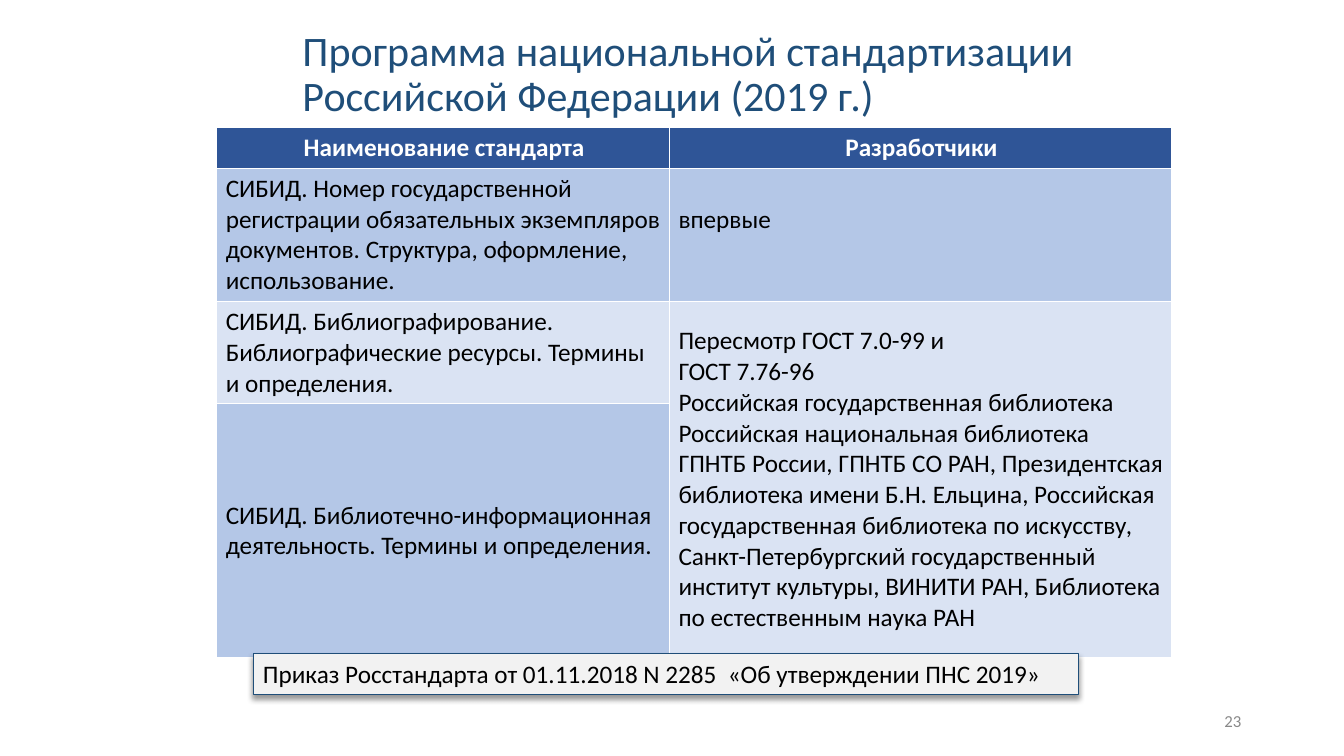
"""Builds the slide on the 2019 national standardization programme."""
from lxml.etree import SubElement
from pptx import Presentation
from pptx.dml.color import RGBColor
from pptx.enum.shapes import MSO_SHAPE
from pptx.enum.text import MSO_ANCHOR, PP_ALIGN
from pptx.oxml.ns import qn
from pptx.util import Inches, Pt

FONT = "Calibri"
NAVY, BLACK, WHITE, GRAY = "1F4E79", "000000", "FFFFFF", "898989"
HEADER, BAND, LIGHT = "2F5597", "B4C7E7", "DAE3F3"

TITLE = "Программа национальной стандартизации Российской Федерации (2019 г.)"
STANDARDS = [
    ("Наименование стандарта", "Разработчики"),
    ("СИБИД. Номер государственной регистрации обязательных экземпляров "
     "документов. Структура, оформление, использование.", "впервые"),
    ("СИБИД. Библиографирование. Библиографические ресурсы. "
     "Термины и определения.",
     "Пересмотр ГОСТ 7.0-99 и\n"
     "ГОСТ 7.76-96\n"
     "Российская государственная библиотека\n"
     "Российская национальная библиотека\n"
     "ГПНТБ России, ГПНТБ СО РАН, Президентская библиотека имени "
     "Б.Н. Ельцина, Российская государственная библиотека по искусству, "
     "Санкт-Петербургский государственный институт культуры, ВИНИТИ РАН, "
     "Библиотека по естественным наука РАН"),
    ("СИБИД. Библиотечно-информационная деятельность. "
     "Термины и определения.", ""),
]
ROW_FILLS = [HEADER, BAND, LIGHT, BAND]
COLUMNS = [4.49, 4.98]
ROWS = [0.41, 1.32, 1.01, 2.52]
ORDER = "Приказ Росстандарта от 01.11.2018 N 2285  «Об утверждении ПНС 2019»"
PAGE = "23"


def color(value):
    return RGBColor.from_string(value)


def box(left, top, width, height):
    return [Inches(length) for length in (left, top, width, height)]


def write(frame, text, size, ink, align=PP_ALIGN.LEFT, bold=False):
    frame.text = text
    frame.word_wrap = True
    for paragraph in frame.paragraphs:
        paragraph.alignment = align
        font = paragraph.font
        font.name, font.size, font.bold = FONT, Pt(size), bold
        font.color.rgb = color(ink)


def add_borders(cell):
    properties = cell._tc.get_or_add_tcPr()
    for side in ("lnL", "lnR", "lnT", "lnB"):
        border = SubElement(properties, qn(f"a:{side}"), w=str(Pt(1)))
        SubElement(SubElement(border, qn("a:solidFill")), qn("a:srgbClr"), val=WHITE)


def add_title(slide):
    title = slide.shapes.title
    title.left, title.top, title.width, title.height = box(2.9, 0.23, 7.98, 1.04)
    write(title.text_frame, TITLE, 30, NAVY)
    title.text_frame.vertical_anchor = MSO_ANCHOR.MIDDLE
    title.text_frame.paragraphs[0].line_spacing = 0.9


def add_standards(slide):
    table = slide.shapes.add_table(
        len(ROWS), len(COLUMNS), *box(2.15, 1.26, sum(COLUMNS), sum(ROWS))).table
    for column, width in zip(table.columns, COLUMNS):
        column.width = Inches(width)
    for r, (texts, height) in enumerate(zip(STANDARDS, ROWS)):
        table.rows[r].height = Inches(height)
        header = r == 0
        for c, text in enumerate(texts):
            cell = table.cell(r, c)
            write(cell.text_frame, text, 18, WHITE if header else BLACK,
                  PP_ALIGN.CENTER if header else PP_ALIGN.LEFT, header)
            cell.vertical_anchor = MSO_ANCHOR.TOP if header else MSO_ANCHOR.MIDDLE
            cell.margin_left, cell.margin_right = Inches(0.09), Inches(0.07)
            cell.margin_top = cell.margin_bottom = Inches(0.05)
            add_borders(cell)
            cell.fill.solid()
            cell.fill.fore_color.rgb = color(ROW_FILLS[r])
    table.cell(1, 1).margin_bottom = Inches(0.35)
    table.cell(2, 1).merge(table.cell(3, 1))


def add_page(slide):
    page = slide.shapes.add_textbox(*box(9.41, 6.95, 3, 0.4)).text_frame
    write(page, PAGE, 12, GRAY, PP_ALIGN.RIGHT)
    page.vertical_anchor = MSO_ANCHOR.MIDDLE


def add_order(slide):
    order = slide.shapes.add_shape(MSO_SHAPE.RECTANGLE, *box(2.51, 6.48, 8.19, 0.41))
    order.fill.solid()
    order.fill.fore_color.rgb = color("F2F2F2")
    order.line.color.rgb = color(NAVY)
    order.line.width = Pt(0.75)
    write(order.text_frame, ORDER, 18, BLACK)
    order.text_frame.vertical_anchor = MSO_ANCHOR.TOP
    order.shadow.inherit = False
    effects = order._element.spPr.find(qn("a:effectLst"))
    shadow = SubElement(effects, qn("a:outerShdw"), blurRad=str(Pt(4)),
                        dist=str(Pt(3)), dir=str(90 * 60000), rotWithShape="0")
    tint = SubElement(shadow, qn("a:srgbClr"), val=BLACK)
    SubElement(tint, qn("a:alpha"), val="40000")


def main():
    deck = Presentation()
    deck.slide_width, deck.slide_height = Inches(13.33), Inches(7.5)
    slide = deck.slides.add_slide(deck.slide_layouts[5])
    add_title(slide)
    add_standards(slide)
    add_page(slide)
    add_order(slide)
    deck.save("out.pptx")


if __name__ == "__main__":
    main()
